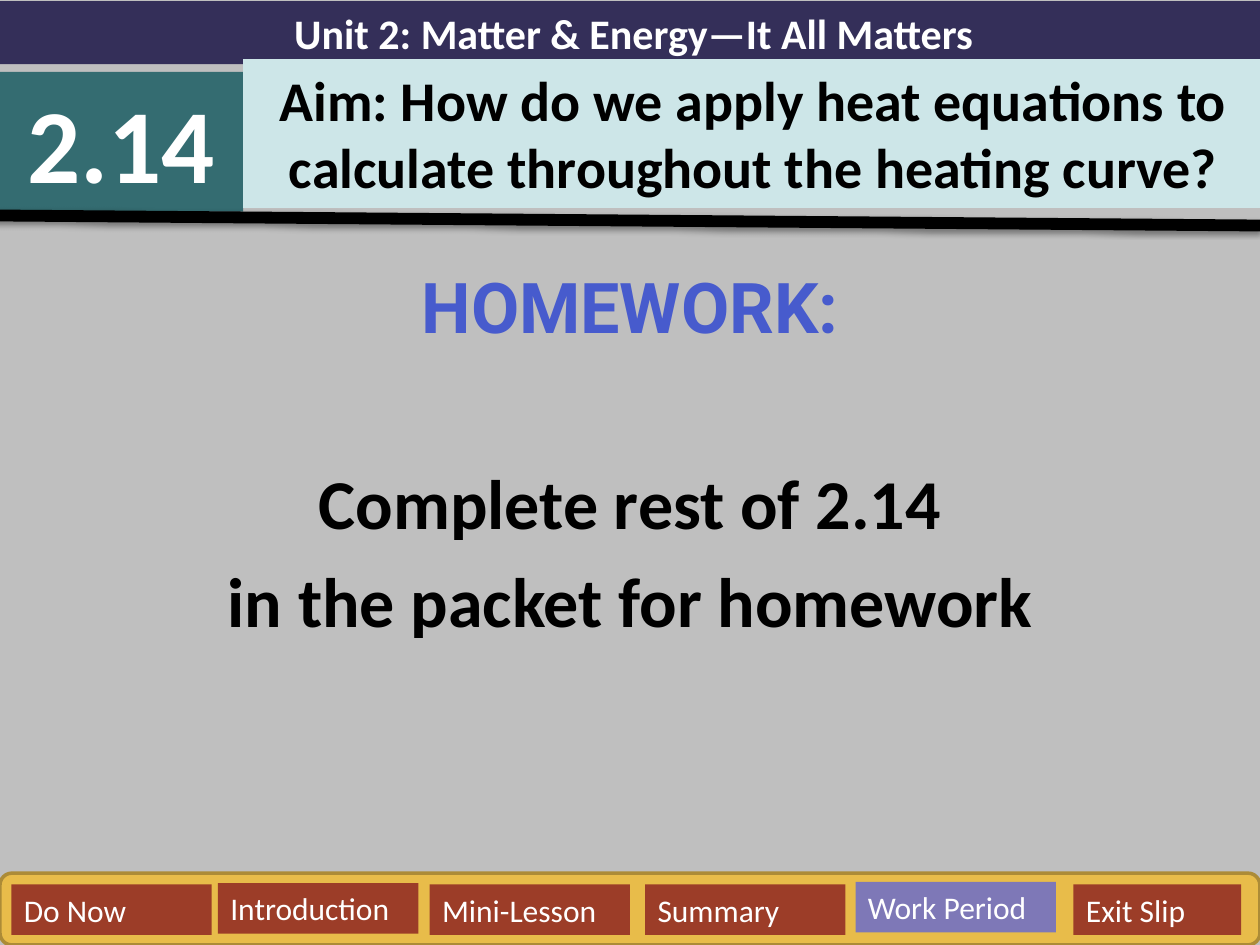
from lxml.etree import fromstring
from pptx import Presentation
from pptx.dml.color import RGBColor
from pptx.enum.shapes import MSO_CONNECTOR, MSO_SHAPE
from pptx.enum.text import MSO_ANCHOR, MSO_AUTO_SIZE, PP_ALIGN
from pptx.util import Inches, Pt


def paint(color_format, color):
    color_format.rgb = RGBColor.from_string(color)


def write(shape, text, size, color="FFFFFF", font="Calibri", bold=True,
          align=PP_ALIGN.CENTER, before=0, add=False):
    frame = shape.text_frame
    frame.word_wrap = True
    frame.auto_size = MSO_AUTO_SIZE.NONE
    frame.vertical_anchor = MSO_ANCHOR.TOP
    paragraph = frame.add_paragraph() if add else frame.paragraphs[0]
    paragraph.alignment = align
    paragraph.space_before = Pt(before)
    run = paragraph.add_run()
    run.text = text
    run.font.name = font
    run.font.size = Pt(size)
    run.font.bold = bold
    paint(run.font.color, color)


presentation = Presentation()
presentation.slide_width = Inches(10)
presentation.slide_height = Inches(7.5)
column = presentation.slide_width // 100
row = presentation.slide_height // 75

slide = presentation.slides.add_slide(presentation.slide_layouts[0])
slide.background.fill.solid()
paint(slide.background.fill.fore_color, "BFBFBF")

homework = slide.placeholders[1]
homework.left, homework.top = 0, int(20.4 * row)
homework.width, homework.height = 100 * column, int(54.6 * row)
write(homework, "HOMEWORK:", 40, color="475BCD", font="Roboto", before=8)
write(homework, "Complete rest of 2.14", 40, color="000000", before=64, add=True)
write(homework, "in the packet for homework", 40, color="000000", before=8, add=True)

headers = [
    ("Unit 2: Matter & Energy—It All Matters", 0.1, 100.6, 5, "342F59", 24),
    ("2.14", 5.7, 19.3, 11.1, "346C71", 60),
]
for text, top, width, height, fill, size in headers:
    header = slide.shapes.add_shape(
        MSO_SHAPE.RECTANGLE, 0, int(top * row), int(width * column), int(height * row))
    header.shadow.inherit = False
    header.fill.solid()
    paint(header.fill.fore_color, fill)
    header.line.fill.background()
    write(header, text, size)

aim = slide.shapes.title
aim.left, aim.top = int(19.3 * column), int(4.7 * row)
aim.width, aim.height = int(81 * column), int(11.8 * row)
aim.fill.solid()
paint(aim.fill.fore_color, "CDE6E8")
write(aim, "Aim: How do we apply heat equations to calculate throughout the heating curve?",
      32, color="000000")
header.element.addnext(aim.element)

divider = slide.shapes.add_connector(
    MSO_CONNECTOR.STRAIGHT, int(-0.5 * column), int(17.1 * row),
    100 * column, int(17.9 * row))
divider.line.width = Pt(6.75)
paint(divider.line.color, "000000")
divider.element.spPr.append(fromstring(
    '<a:effectLst xmlns:a="http://schemas.openxmlformats.org/drawingml/2006/main">'
    f'<a:outerShdw blurRad="{Pt(3.1)}" dist="{Pt(1.6)}" dir="5400000" rotWithShape="0">'
    '<a:srgbClr val="000000"><a:alpha val="38000"/></a:srgbClr>'
    '</a:outerShdw></a:effectLst>'))

navigation = slide.shapes.add_group_shape()
bar = navigation.shapes.add_shape(
    MSO_SHAPE.ROUNDED_RECTANGLE, 0, int(69.3 * row), 100 * column, int(5.7 * row))
bar.shadow.inherit = False
bar.fill.solid()
paint(bar.fill.fore_color, "E8BC4A")
paint(bar.line.color, "AC8B37")
bar.line.width = Pt(2)

buttons = [
    ("Do Now", 0.9, 70.2, 15.9, "9C3D28"),
    ("Introduction", 17.3, 70.1, 15.9, "9C3D28"),
    ("Mini-Lesson", 34.1, 70.2, 15.9, "9C3D28"),
    ("Summary", 51.2, 70.2, 15.9, "9C3D28"),
    ("Work Period", 67.9, 70, 15.9, "7E78B7"),
    ("Exit Slip", 85.2, 70.2, 13.3, "9C3D28"),
]
for text, left, top, width, fill in buttons:
    button = navigation.shapes.add_shape(
        MSO_SHAPE.RECTANGLE, int(left * column), int(top * row), int(width * column), 4 * row)
    button.shadow.inherit = False
    button.fill.solid()
    paint(button.fill.fore_color, fill)
    button.line.fill.background()
    write(button, text, 18, bold=False, align=PP_ALIGN.LEFT)

presentation.save("out.pptx")
